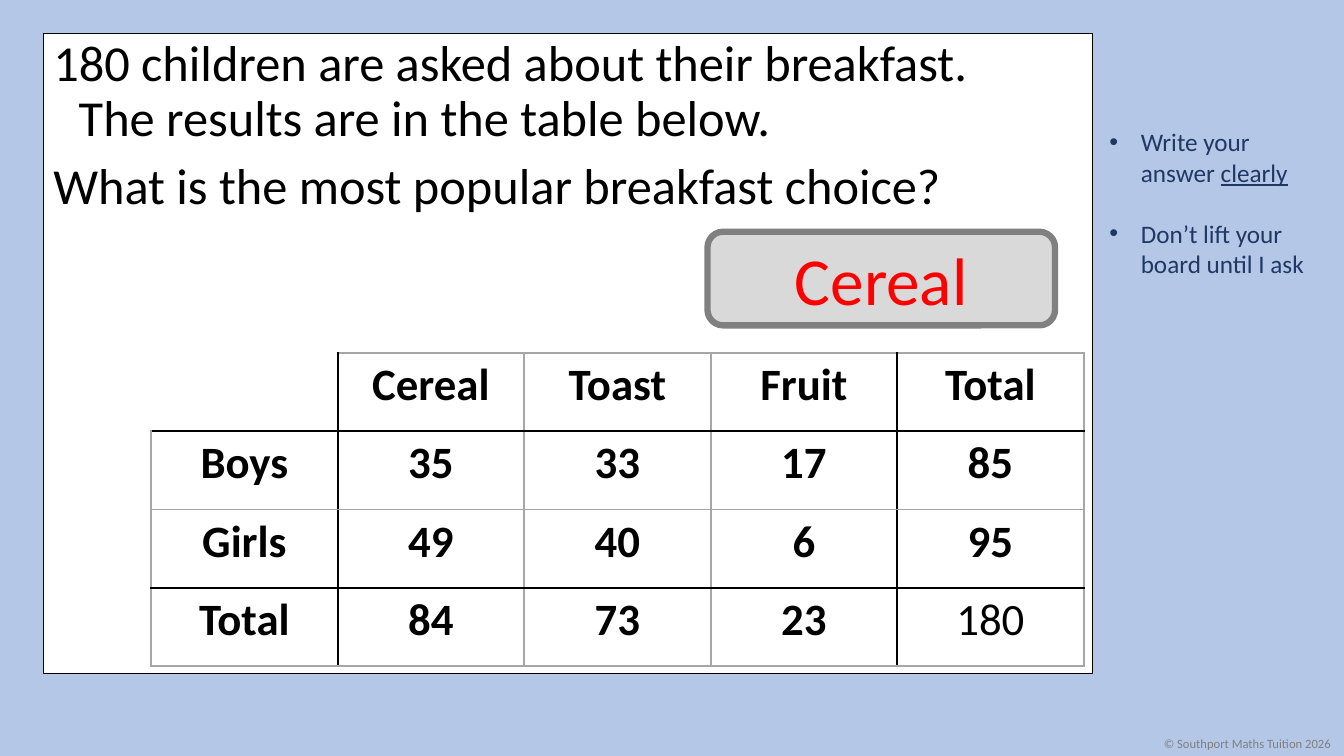
from lxml import etree
from pptx import Presentation
from pptx.dml.color import RGBColor
from pptx.enum.shapes import MSO_SHAPE
from pptx.enum.text import MSO_ANCHOR, MSO_AUTO_SIZE, PP_ALIGN
from pptx.oxml.ns import qn
from pptx.util import Cm, Pt

ROUND = MSO_SHAPE.ROUNDED_RECTANGLE
MIDDLE = MSO_ANCHOR.MIDDLE
TOP = MSO_ANCHOR.TOP
FIXED = MSO_AUTO_SIZE.NONE
CENTER = PP_ALIGN.CENTER
LEFT = PP_ALIGN.LEFT

INK = {
    "sky": "B4C7E7", "white": "FFFFFF", "black": "000000", "navy": "203864",
    "gray": "808080", "pale": "D9D9D9", "rule": "A6A6A6", "red": "FF0000",
}
DATA = [
    ["", "Cereal", "Toast", "Fruit", "Total"],
    ["Boys", "35", "33", "17", "85"],
    ["Girls", "49", "40", "6", "95"],
    ["Total", "84", "73", "23", "180"],
]
DARK_ROWS = (1, 3)
DARK_COLS = (1, 4)


def tint(name):
    return RGBColor.from_string(INK[name])


def apply(target, values):
    for key, value in values.items():
        setattr(target, key, value)


def style(font, size, ink, **extra):
    apply(font, {"name": "Calibri", "size": Pt(size), **extra})
    font.color.rgb = tint(ink)


def paint(shape, fill, line, width):
    shape.fill.solid()
    shape.fill.fore_color.rgb = tint(fill)
    shape.line.color.rgb = tint(line)
    shape.line.width = Pt(width)


def hang(para, indent, mark=None):
    props = para._p.get_or_add_pPr()
    props.set("marL", str(indent))
    props.set("indent", str(-indent))
    if mark:
        font = etree.SubElement(props, qn("a:buFont"))
        font.set("typeface", "Arial")
        etree.SubElement(props, qn("a:buChar")).set("char", mark)
    else:
        etree.SubElement(props, qn("a:buNone"))


def add_task(slide, left, top, width, height):
    body = slide.placeholders[1]
    apply(body, {"left": left, "top": top, "width": width, "height": height})
    paint(body, "white", "black", 1)
    frame = body.text_frame
    apply(frame, {"auto_size": FIXED, "vertical_anchor": TOP, "word_wrap": True})
    frame.text = (
        "180 children are asked about their breakfast.\v"
        "The results are in the table below.\n"
        "What is the most popular breakfast choice?"
    )
    for para, gap in zip(frame.paragraphs, (0, 10)):
        hang(para, Cm(0.64))
        apply(para, {"alignment": LEFT, "line_spacing": 0.9, "space_before": Pt(gap)})
        for run in para.runs:
            style(run.font, 36, "black")


def add_tips(slide, left, top, width, height):
    frame = slide.shapes.add_textbox(left, top, width, height).text_frame
    frame.word_wrap = True
    tips = [[("Write your answer ", False), ("clearly", True)],
            [("Don’t lift your board until I ask", False)]]
    for row, parts in enumerate(tips):
        para = frame.add_paragraph() if row else frame.paragraphs[0]
        hang(para, Cm(0.79), "•")
        para.space_before = Pt(22 * row)
        for words, under in parts:
            run = para.add_run()
            run.text = words
            style(run.font, 18, "navy", underline=under)


def add_credit(slide, left, top, width, height):
    frame = slide.shapes.add_textbox(left, top, width, height).text_frame
    frame.word_wrap = False
    frame.text = "© Southport Maths Tuition 2026"
    style(frame.paragraphs[0].runs[0].font, 9, "gray")


def add_answer(slide, left, top, width, height):
    shape = slide.shapes.add_shape(ROUND, left, top, width, height)
    shape.shadow.inherit = False
    paint(shape, "pale", "gray", 4.5)
    frame = shape.text_frame
    frame.vertical_anchor = MIDDLE
    frame.text = "Cereal"
    para = frame.paragraphs[0]
    para.alignment = CENTER
    style(para.runs[0].font, 48, "red")


def edge(cell, side, ink):
    line = etree.Element(qn("a:" + side), w=str(Pt(1.5)))
    if ink:
        fill = etree.SubElement(line, qn("a:solidFill"))
        etree.SubElement(fill, qn("a:srgbClr")).set("val", INK[ink])
    else:
        etree.SubElement(line, qn("a:noFill"))
    return line


def frame_cell(cell, row, col):
    corner = row == col == 0
    sides = [("lnL", col in DARK_COLS, corner), ("lnR", col + 1 in DARK_COLS, False),
             ("lnT", row in DARK_ROWS, corner), ("lnB", row + 1 in DARK_ROWS, False)]
    props = cell._tc.get_or_add_tcPr()
    for spot, (side, dark, bare) in enumerate(sides):
        ink = None if bare else "black" if dark else "rule"
        props.insert(spot, edge(cell, side, ink))


def add_grid(slide, left, top, width, height):
    rows, cols = len(DATA), len(DATA[0])
    table = slide.shapes.add_table(rows, cols, left, top, width, height).table
    apply(table, {"first_row": False, "horz_banding": False})
    for row, words in enumerate(DATA):
        for col, word in enumerate(words):
            cell = table.cell(row, col)
            cell.fill.solid()
            cell.fill.fore_color.rgb = tint("white")
            frame_cell(cell, row, col)
            cell.text = word
            para = cell.text_frame.paragraphs[0]
            para.alignment = CENTER
            style(para.font, 32, "black")
            for run in para.runs:
                style(run.font, 32, "black", bold=word != "180")


def main():
    deck = Presentation()
    apply(deck, {"slide_width": Cm(33.87), "slide_height": Cm(19.05)})
    slide = deck.slides.add_slide(deck.slide_layouts[1])
    title = slide.shapes.title.element
    title.getparent().remove(title)
    back = slide.background.fill
    back.solid()
    back.fore_color.rgb = tint("sky")
    add_task(slide, Cm(1.09), Cm(0.84), Cm(26.44), Cm(16.13))
    add_tips(slide, Cm(27.71), Cm(3.07), Cm(5.89), Cm(4.11))
    add_credit(slide, Cm(29.08), Cm(18.42), Cm(4.78), Cm(0.63))
    add_answer(slide, Cm(17.83), Cm(5.84), Cm(8.76), Cm(2.36))
    add_grid(slide, Cm(3.81), Cm(8.89), Cm(23.5), Cm(7.9))
    deck.save("out.pptx")


if __name__ == "__main__":
    main()
